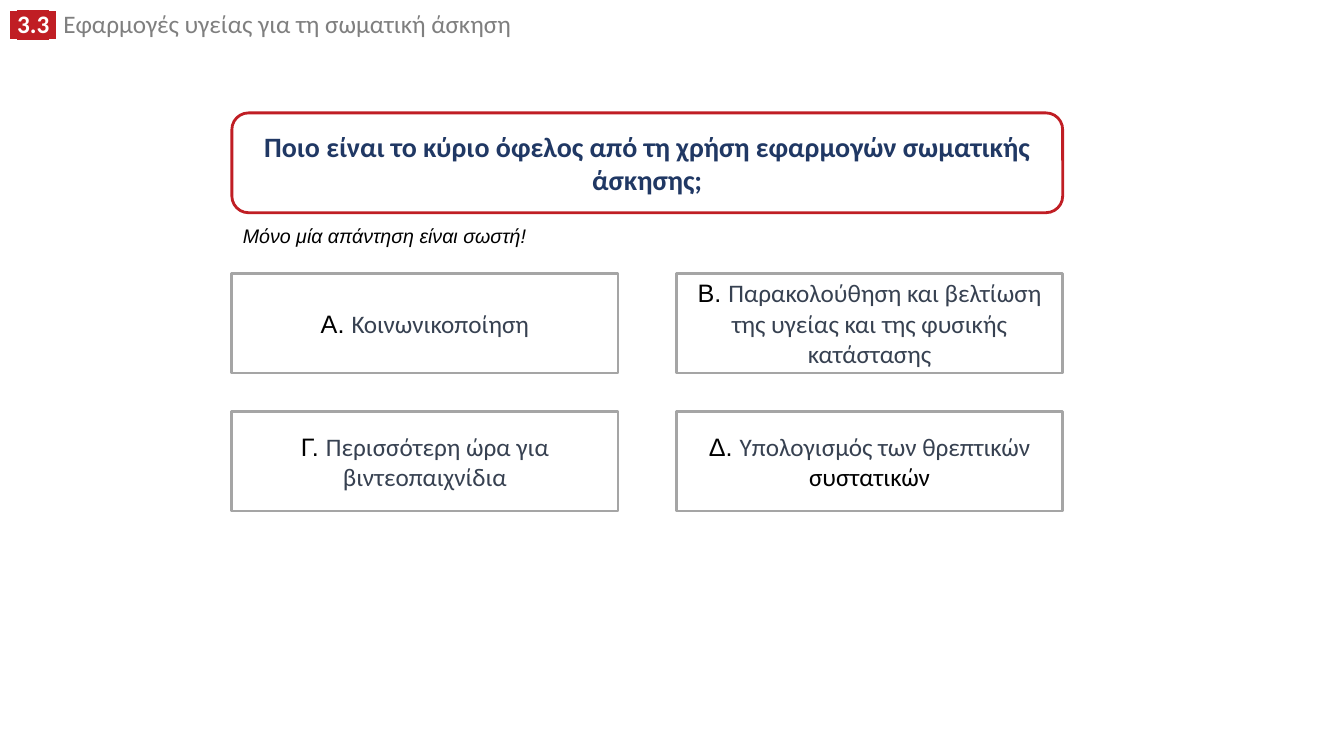
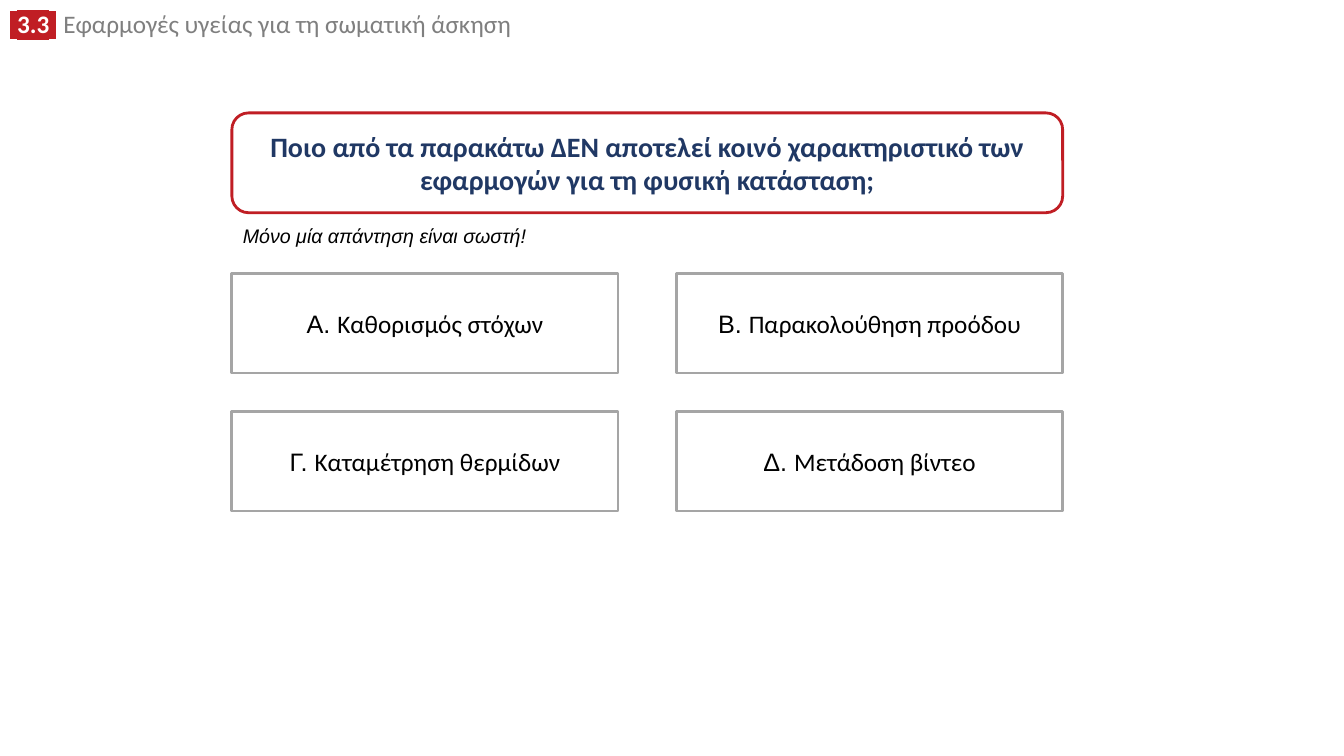
from dataclasses import dataclass

import pptx
import pptx.dml.color
import pptx.enum.shapes
import pptx.enum.text
import pptx.oxml
import pptx.oxml.ns
import pptx.presentation
import pptx.shapes.autoshape
import pptx.slide
import pptx.text.text
import pptx.util

Inches = pptx.util.Inches
Shapes = pptx.enum.shapes.MSO_SHAPE
Align = pptx.enum.text.PP_ALIGN
Anchor = pptx.enum.text.MSO_ANCHOR
AutoSize = pptx.enum.text.MSO_AUTO_SIZE


# Shared look
@dataclass(frozen=True)
class Theme:
    red: str = "C01E24"
    navy: str = "203864"
    slate: str = "374151"
    heading_grey: str = "7F7F7F"
    border_grey: str = "A5A5A5"
    black: str = "000000"
    white: str = "FFFFFF"
    latin: str = "Calibri"
    label: str = "Arial"
    question_size: int = 20
    body_size: int = 18
    hint_size: int = 14
    outline: int = 2


THEME = Theme()


@dataclass(frozen=True)
class Span:
    text: str
    font: str = THEME.latin
    color: str = THEME.black
    size: int = THEME.body_size
    bold: bool = False
    italic: bool = False
    highlight: str = ""


@dataclass(frozen=True)
class Box:
    left: float
    top: float
    width: float
    height: float

    def lengths(self) -> tuple[int, int, int, int]:
        return (Inches(self.left), Inches(self.top),
                Inches(self.width), Inches(self.height))


@dataclass(frozen=True)
class Quiz:
    question: str
    answers: tuple[tuple[Span, ...], ...]


# Places
HEADING_BOX = Box(0, 0.09, 9.52, 0.35)
QUESTION_BOX = Box(2.3, 1.12, 8.24, 0.99)
HINT_BOX = Box(2.31, 2.17, 3.04, 0.34)
ANSWER_BOX = Box(2.3, 2.71, 3.83, 0.99)
COLUMN_STEP = QUESTION_BOX.width - ANSWER_BOX.width
ROW_STEP = 1.37
COLUMNS = 2

# Wording
HEADING = (
    Span(" ", THEME.label, THEME.white, bold=True, highlight=THEME.red),
    Span("3.3", color=THEME.white, bold=True, highlight=THEME.red),
    Span(" ", THEME.label, THEME.white, bold=True, highlight=THEME.red),
    Span(" ", THEME.label, THEME.heading_grey),
    Span("Εφαρμογές υγείας για τη σωματική άσκηση", color=THEME.heading_grey),
)
HINT = Span("Μόνο μία απάντηση είναι σωστή!", THEME.label,
            size=THEME.hint_size, italic=True)
LETTERS = "ΑΒΓΔ"

QUIZZES = (
    Quiz(
        "Ποιο είναι το κύριο όφελος από τη χρήση εφαρμογών σωματικής άσκησης;",
        (
            (Span("Κοινωνικοποίηση", color=THEME.slate),),
            (Span("Παρακολούθηση και βελτίωση της υγείας και της φυσικής "
                  "κατάστασης", color=THEME.slate),),
            (Span("Περισσότερη ώρα για βιντεοπαιχνίδια", color=THEME.slate),),
            (Span("Υπολογισμός των θρεπτικών ", color=THEME.slate),
             Span("συστατικών")),
        ),
    ),
    Quiz(
        "Ποιο από τα παρακάτω ΔΕΝ αποτελεί κοινό χαρακτηριστικό των "
        "εφαρμογών για τη φυσική κατάσταση;",
        (
            (Span("Καθορισμός στόχων"),),
            (Span("Παρακολούθηση προόδου"),),
            (Span("Καταμέτρηση θερμίδων"),),
            (Span("Μετάδοση βίντεο"),),
        ),
    ),
)


def rgb(color: str) -> pptx.dml.color.RGBColor:
    return pptx.dml.color.RGBColor.from_string(color)


def write_spans(paragraph: pptx.text.text._Paragraph,
                spans: tuple[Span, ...]) -> None:
    for span in spans:
        run = paragraph.add_run()
        run.text = span.text
        font = run.font
        font.name, font.size = span.font, pptx.util.Pt(span.size)
        font.bold, font.italic = span.bold, span.italic
        font.color.rgb = rgb(span.color)
        if span.highlight:
            # The highlight element belongs right after the text fill
            fill = font._element.find(pptx.oxml.ns.qn("a:solidFill"))
            fill.addnext(pptx.oxml.parse_xml(
                f'<a:highlight {pptx.oxml.ns.nsdecls("a")}>'
                f'<a:srgbClr val="{span.highlight}"/></a:highlight>'))


def add_heading(slide: pptx.slide.Slide) -> None:
    title = slide.shapes.title
    title.left, title.top, title.width, title.height = HEADING_BOX.lengths()
    frame = title.text_frame
    frame.word_wrap = True
    frame.auto_size = AutoSize.SHAPE_TO_FIT_TEXT
    frame.vertical_anchor = Anchor.TOP
    paragraph = frame.paragraphs[0]
    paragraph.alignment = Align.LEFT
    paragraph.line_spacing = 0.8
    write_spans(paragraph, HEADING)


def add_panel(slide: pptx.slide.Slide, kind: Shapes, box: Box, border: str,
              spans: tuple[Span, ...]) -> None:
    panel = slide.shapes.add_shape(kind, *box.lengths())
    panel.shadow.inherit = False
    panel.fill.solid()
    panel.fill.fore_color.rgb = rgb(THEME.white)
    panel.line.color.rgb = rgb(border)
    panel.line.width = pptx.util.Pt(THEME.outline)
    frame = panel.text_frame
    frame.word_wrap = True
    frame.vertical_anchor = Anchor.MIDDLE
    paragraph = frame.paragraphs[0]
    paragraph.alignment = Align.CENTER
    write_spans(paragraph, spans)


def add_hint(slide: pptx.slide.Slide) -> None:
    hint = slide.shapes.add_textbox(*HINT_BOX.lengths())
    hint.text_frame.word_wrap = False
    hint.text_frame.auto_size = AutoSize.SHAPE_TO_FIT_TEXT
    write_spans(hint.text_frame.paragraphs[0], (HINT,))


def add_quiz(deck: pptx.presentation.Presentation, quiz: Quiz) -> None:
    title_only = deck.slide_layouts[5]
    slide = deck.slides.add_slide(title_only)
    add_heading(slide)

    # Question and hint
    question = Span(quiz.question, color=THEME.navy,
                    size=THEME.question_size, bold=True)
    add_panel(slide, Shapes.ROUNDED_RECTANGLE, QUESTION_BOX, THEME.red,
              (question,))
    add_hint(slide)

    # Answer grid
    for index, (letter, answer) in enumerate(zip(LETTERS, quiz.answers)):
        row, column = divmod(index, COLUMNS)
        box = Box(ANSWER_BOX.left + column * COLUMN_STEP,
                  ANSWER_BOX.top + row * ROW_STEP,
                  ANSWER_BOX.width, ANSWER_BOX.height)
        add_panel(slide, Shapes.RECTANGLE, box, THEME.border_grey,
                  (Span(f"{letter}. ", THEME.label), *answer))


def main() -> None:
    deck = pptx.Presentation()
    deck.slide_width, deck.slide_height = Inches(13.33), Inches(7.5)
    for quiz in QUIZZES:
        add_quiz(deck, quiz)
    deck.save("out.pptx")


if __name__ == "__main__":
    main()
